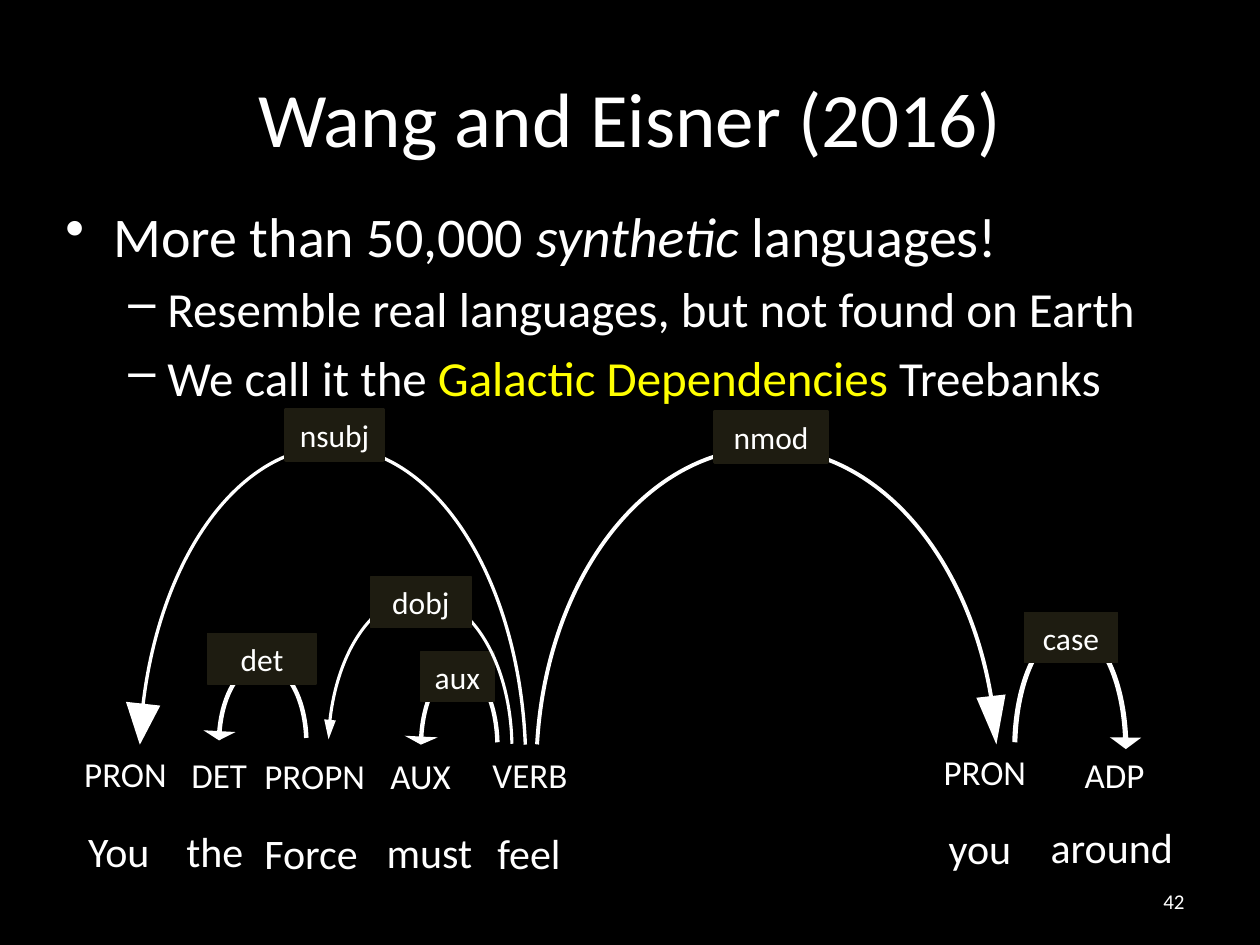
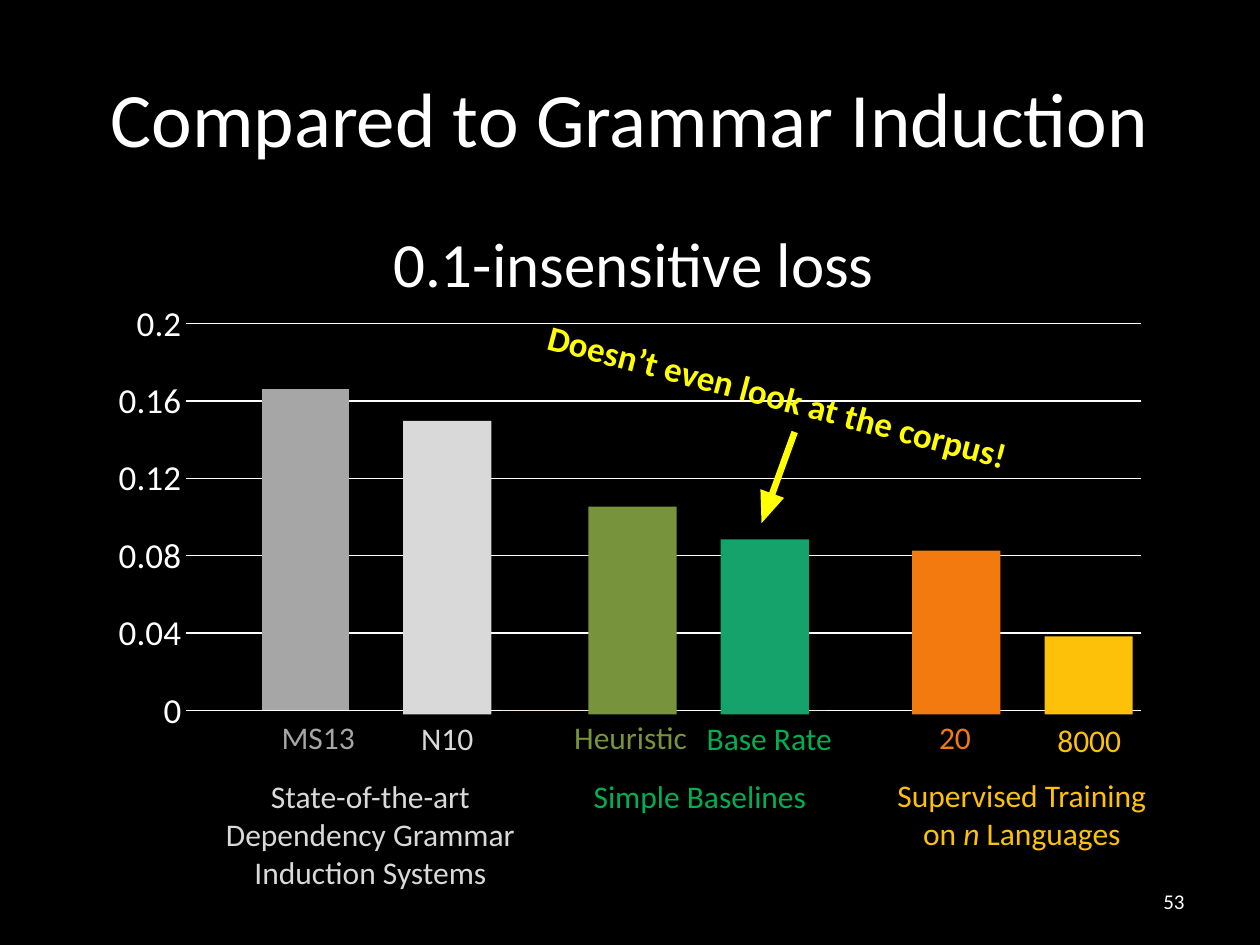
import pptx
import pptx.chart.data
import pptx.dml.color
import pptx.enum.chart
import pptx.enum.shapes
import pptx.enum.text
import pptx.oxml
import pptx.oxml.ns
import pptx.util

Inches, Pt = pptx.util.Inches, pptx.util.Pt
ALIGN = pptx.enum.text.PP_ALIGN
ANCHOR = pptx.enum.text.MSO_ANCHOR
SHAPE = pptx.enum.shapes.MSO_SHAPE

FONT = "Calibri"
BLACK, WHITE, YELLOW = "000000", "FFFFFF", "FFFF00"
LABEL_FILL = "1E1C11"
GREY, SILVER = "A6A6A6", "D9D9D9"
OLIVE, GREEN, TEAL = "77933C", "00B050", "15A26B"
ORANGE, AMBER = "F27A0F", "FEC109"

ARC_START = 186.33
ARC_HEAD_ANGLE = 11.91
BAR_WIDTH, BAR_BOTTOM = 0.7, 5.67

# word, (left, top, width), tag, (left, top, width)
TOKENS = [
    ("You", (0.6, 6.5, 0.75), "PRON", (0.57, 5.92, 0.87)),
    ("the", (1.38, 6.5, 0.68), "DET", (1.42, 5.93, 0.65)),
    ("Force", (2, 6.52, 1), "PROPN", (2, 5.94, 1.01)),
    ("must", (2.97, 6.51, 0.92), "AUX", (3, 5.94, 0.69)),
    ("feel", (3.85, 6.52, 0.74), "VERB", (3.81, 5.93, 0.8)),
    ("you", (7.43, 6.48, 0.73), "PRON", (7.39, 5.91, 0.87)),
    ("around", (8.24, 6.47, 1.22), "ADP", (8.51, 5.93, 0.68)),
]

# relation, label (left, top, width), label line, arc box, points left,
# arc thickness %, arc start and end in degrees, arrowhead %
ARCS = [
    ("nsubj", (2.27, 3.25, 0.77), 2, (0.97, 3.41, 3.34, 5.34), True,
     0.8, ARC_START, 341.8, 4.1),
    ("nmod", (5.67, 3.27, 0.9), 2, (4.14, 3.44, 3.89, 5.34), False,
     0.8, ARC_START, 341.8, 3),
    ("aux", (3.34, 5.17, 0.58), 0.75, (3.21, 5.17, 0.87, 1.51), True,
     4, ARC_START, 345.27, 15.1),
    ("det", (1.65, 5.03, 0.86), 0.75, (1.61, 5.14, 0.95, 1.51), True,
     3.8, ARC_START, 344.94, 13.5),
    ("dobj", (2.94, 4.58, 0.8), 0.75, (2.56, 4.68, 1.55, 2.52), True,
     1.6, 182.9, 342.44, 3),
    ("case", (8.13, 4.86, 0.74), 0.75, (7.93, 4.87, 1.13, 2.14), False,
     3.6, ARC_START, 348.81, 11),
]

# left, top, colour
BARS = [
    (3.2, 3.34, SILVER),
    (4.67, 4.02, OLIVE),
    (5.72, 4.28, TEAL),
    (7.24, 4.37, ORANGE),
    (8.29, 5.05, AMBER),
]

# text, left, top, width, height, colour
BAR_LABELS = [
    ("MS13", 2.13, 5.65, 0.79, 0.4, GREY),
    ("N10", 3.24, 5.66, 0.62, 0.4, SILVER),
    ("Heuristic", 4.45, 5.65, 1.11, 0.4, OLIVE),
    ("Base Rate", 5.5, 5.66, 1.21, 0.4, GREEN),
    ("20", 7.35, 5.65, 0.46, 0.4, ORANGE),
    ("8000", 8.29, 5.67, 0.71, 0.4, AMBER),
    ("Simple Baselines", 4.6, 6.12, 1.91, 0.4, GREEN),
    ("State-of-the-art\nDependency Grammar\vInduction Systems",
     1.68, 6.12, 2.52, 1.01, SILVER),
]


def rgb(color):
    return pptx.dml.color.RGBColor.from_string(color)


def inches(*lengths):
    return [Inches(length) for length in lengths]


def set_font(font, size, color=WHITE, bold=None):
    font.name, font.size, font.bold = FONT, Pt(size), bold
    font.color.rgb = rgb(color)


def format_text(frame, size, color=WHITE, align=ALIGN.LEFT, bold=None):
    for paragraph in frame.paragraphs:
        paragraph.alignment = align
        set_font(paragraph.font, size, color, bold)


def add_text(slide, text, box, size, color=WHITE, align=ALIGN.LEFT,
             wrap=False, bold=None):
    text_box = slide.shapes.add_textbox(*inches(*box))
    frame = text_box.text_frame
    frame.text, frame.word_wrap = text, wrap
    format_text(frame, size, color, align, bold)
    return text_box


def add_filled(slide, kind, box, color):
    """Add a flat preset shape without outline."""
    shape = slide.shapes.add_shape(kind, *inches(*box))
    shape.shadow.inherit = False
    shape.fill.solid()
    shape.fill.fore_color.rgb = rgb(color)
    shape.line.fill.background()
    return shape


def add_slide(prs, title, number):
    slide = prs.slides.add_slide(prs.slide_layouts[5])
    heading = slide.shapes.title
    heading.left, heading.top, heading.width, heading.height = inches(
        0.5, 0.3, 9, 1.25)
    heading.text_frame.text = title
    heading.text_frame.vertical_anchor = ANCHOR.MIDDLE
    format_text(heading.text_frame, 44, align=ALIGN.CENTER)
    page = add_text(slide, number, (7.17, 6.95, 2.33, 0.4), 12,
                    align=ALIGN.RIGHT, wrap=True)
    page.text_frame.vertical_anchor = ANCHOR.MIDDLE
    return slide


def add_bullet(paragraph, runs, mark, size, margin, hanging, before=0):
    """Runs are (text, font settings) pairs."""
    properties = paragraph._p.get_or_add_pPr()
    properties.set("marL", str(Inches(margin)))
    properties.set("indent", str(-Inches(hanging)))
    bullet = pptx.oxml.parse_xml(
        f'<a:buChar {pptx.oxml.ns.nsdecls("a")} char="{mark}"/>')
    properties.append(bullet)
    paragraph.space_before = Pt(before)
    set_font(paragraph.font, size)
    for text, style in runs:
        run = paragraph.add_run()
        run.text = text
        run.font.italic = style.get("italic")
        if "color" in style:
            run.font.color.rgb = rgb(style["color"])


def add_arc(slide, box, points_left, thickness, start, end, head):
    arc = add_filled(slide, SHAPE.CIRCULAR_ARROW, box, WHITE)
    if points_left:
        arc._element.spPr.xfrm.set("flipH", "1")
    degree = 0.6  # 60000 angle units, as python-pptx scales adjustments
    values = (thickness / 100, ARC_HEAD_ANGLE * degree, end * degree,
              start * degree, head / 100)
    for index, value in enumerate(values):
        arc.adjustments[index] = value


def add_relation_label(slide, relation, place, line_width):
    label = add_filled(slide, SHAPE.RECTANGLE, (*place, 0.4), LABEL_FILL)
    label.line.color.rgb = rgb(LABEL_FILL)
    label.line.width = Pt(line_width)
    label.text_frame.text = relation
    format_text(label.text_frame, 18, align=ALIGN.CENTER)


def place_in_chart(parent, chart_box, left, top, width=None, height=None):
    """Fix the place of a chart part, given in inches on the slide."""
    chart_left, chart_top, chart_width, chart_height = chart_box
    settings = [("xMode", "edge"), ("yMode", "edge"),
                ("x", (left - chart_left) / chart_width),
                ("y", (top - chart_top) / chart_height)]
    if width:
        settings.insert(0, ("layoutTarget", "inner"))
        settings += [("w", width / chart_width), ("h", height / chart_height)]
    items = "".join(f'<c:{tag} val="{value}"/>' for tag, value in settings)
    for old in parent.findall(pptx.oxml.ns.qn("c:layout")):
        parent.remove(old)
    layout = pptx.oxml.parse_xml(
        f'<c:layout {pptx.oxml.ns.nsdecls("c")}>'
        f'<c:manualLayout>{items}</c:manualLayout></c:layout>')
    text = parent.find(pptx.oxml.ns.qn("c:tx"))
    parent.insert(0 if text is None else 1, layout)


def add_loss_chart(slide):
    box = (0.77, 1.45, 8.47, 4.44)
    data = pptx.chart.data.CategoryChartData()
    data.categories = ["1", "2", "3", "4"]
    data.add_series("Series 1", (0.166, 0, 0, None))
    chart = slide.shapes.add_chart(
        pptx.enum.chart.XL_CHART_TYPE.COLUMN_CLUSTERED, *inches(*box),
        data).chart
    set_font(chart.font, 10)
    chart.has_legend = False
    chart.has_title = True
    chart.chart_title.text_frame.text = "0.1-insensitive loss"
    title_font = chart.chart_title.text_frame.paragraphs[0].font
    set_font(title_font, 36, bold=False)
    place_in_chart(chart.chart_title._element, box, 3.03, 1.65)
    place_in_chart(chart._chartSpace.chart.plotArea, box,
                   1.48, 2.57, 7.58, 3.07)

    plot = chart.plots[0]
    plot.gap_width, plot.overlap = 175, 30
    plot.vary_by_categories = False
    series = plot.series[0]
    for part, color in ((series, ORANGE), (series.points[0], GREY)):
        part.format.fill.solid()
        part.format.fill.fore_color.rgb = rgb(color)

    chart.category_axis.visible = False
    loss_axis = chart.value_axis
    loss_axis.minimum_scale, loss_axis.maximum_scale = 0, 0.2
    loss_axis.major_unit = 0.04
    loss_axis.major_tick_mark = pptx.enum.chart.XL_TICK_MARK.NONE
    loss_axis.format.line.fill.background()
    set_font(loss_axis.tick_labels.font, 20)
    grid = loss_axis.major_gridlines.format.line
    grid.width = Pt(0.75)
    grid.color.rgb = rgb(WHITE)


def build_treebank_slide(prs):
    slide = add_slide(prs, "Wang and Eisner (2016)", "42")
    points = slide.shapes.add_textbox(*inches(0.42, 1.55, 9.25, 1.75))
    frame = points.text_frame
    frame.word_wrap = True
    add_bullet(frame.paragraphs[0],
               [("More than 50,000 ", {}), ("synthetic", {"italic": True}),
                (" languages!", {})], "•", 32, 0.38, 0.38)
    for runs in (
            [("Resemble real languages, but not found on Earth", {})],
            [("We call it the ", {}),
             ("Galactic Dependencies ", {"color": YELLOW}),
             ("Treebanks", {})]):
        add_bullet(frame.add_paragraph(), runs, "–", 28, 0.81, 0.31, 5.6)

    for relation, place, line_width, *arc in ARCS:
        add_arc(slide, *arc)
        add_relation_label(slide, relation, place, line_width)
    for word, word_place, tag, tag_place in TOKENS:
        add_text(slide, word, (*word_place, 0.5), 24)
        add_text(slide, tag, (*tag_place, 0.44), 20)


def build_comparison_slide(prs):
    slide = add_slide(prs, "Compared to Grammar Induction", "53")
    add_loss_chart(slide)
    for left, top, color in BARS:
        add_filled(slide, SHAPE.RECTANGLE,
                   (left, top, BAR_WIDTH, BAR_BOTTOM - top), color)
    for text, left, top, width, height, color in BAR_LABELS:
        add_text(slide, text, (left, top, width, height), 18, color,
                 ALIGN.CENTER)

    training = add_text(slide, "Supervised Training on ",
                        (6.87, 6.11, 2.48, 0.71), 18, AMBER, ALIGN.CENTER,
                        wrap=True)
    sentence = training.text_frame.paragraphs[0]
    variable = sentence.add_run()
    variable.text, variable.font.italic = "n", True
    sentence.add_run().text = " Languages"

    remark = add_text(slide, "Doesn’t even look at the corpus!",
                      (4.19, 2.98, 4.36, 0.44), 20, YELLOW, wrap=True,
                      bold=True)
    remark.rotation = 14.8
    pointer = add_filled(slide, SHAPE.RIGHT_ARROW, (5.79, 3.69, 0.77, 0.2),
                         YELLOW)
    pointer.rotation = 110
    pointer.adjustments[0], pointer.adjustments[1] = 0.26, 1.25


def main():
    prs = pptx.Presentation()
    prs.slide_width, prs.slide_height = inches(10, 7.5)
    background = prs.slide_master.background.fill
    background.solid()
    background.fore_color.rgb = rgb(BLACK)
    build_treebank_slide(prs)
    build_comparison_slide(prs)
    prs.save("out.pptx")


if __name__ == "__main__":
    main()
